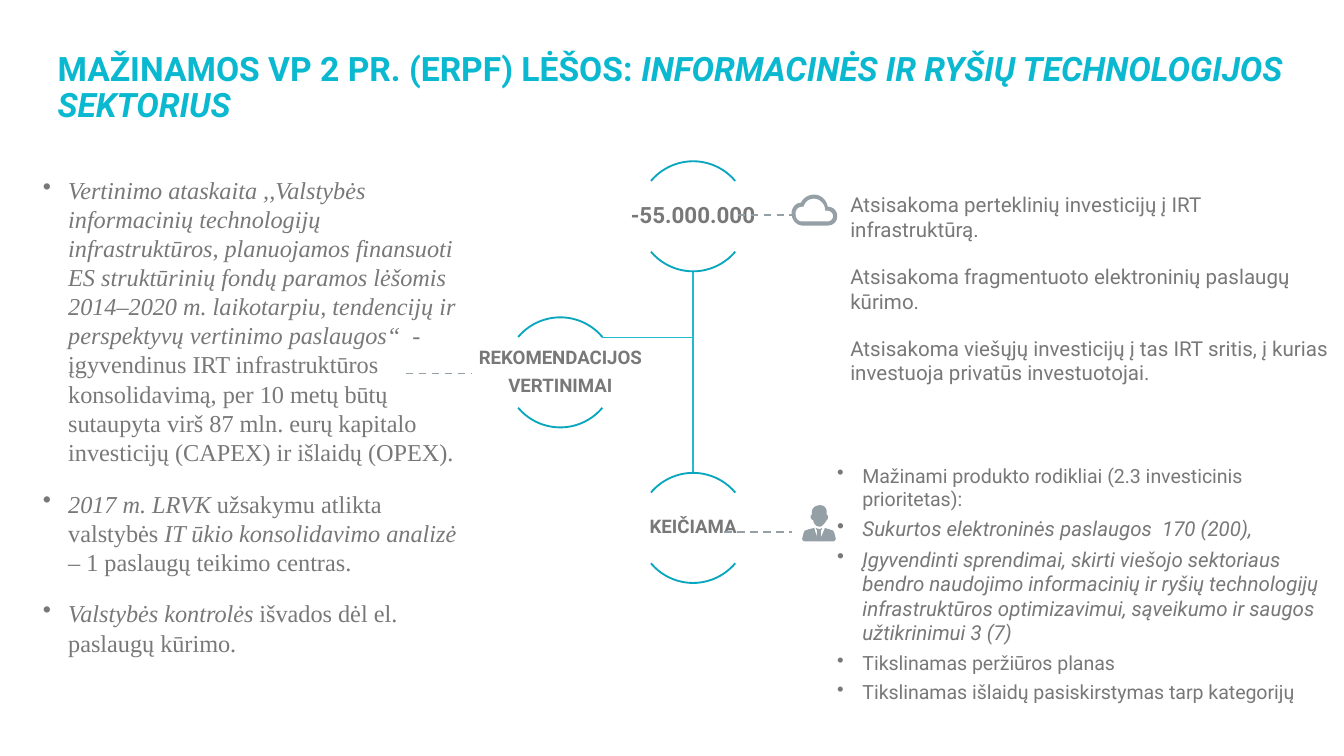
from dataclasses import dataclass

from lxml.etree import SubElement
from pptx import Presentation
from pptx.dml.color import RGBColor
from pptx.enum.dml import MSO_LINE
from pptx.enum.shapes import MSO_CONNECTOR, MSO_SHAPE
from pptx.enum.text import MSO_ANCHOR, MSO_AUTO_SIZE, PP_ALIGN
from pptx.oxml.ns import qn
from pptx.util import Cm, Pt

TITLE = RGBColor(0x0A, 0xB8, 0xD0)
ARC = RGBColor(0x09, 0xA7, 0xBD)
TRUNK = RGBColor(0x23, 0xB9, 0xD1)
TEXT = RGBColor(0x78, 0x78, 0x78)
GREY = RGBColor(0x95, 0x9F, 0xA6)

SANS, SERIF = "Roboto", "Times New Roman"
RING = 2.08       # diameter of a hub
UNIT = 0.0254     # grid step of the icons, in cm


@dataclass
class Bit:
    text: str
    slant: bool = False


@dataclass
class Para:
    bits: list[Bit]
    size: float


@dataclass
class Style:
    font: str = SANS
    color: RGBColor = TEXT
    bold: bool = False
    align: PP_ALIGN = PP_ALIGN.LEFT
    anchor: MSO_ANCHOR = MSO_ANCHOR.TOP
    before: float = 0
    after: float = 0
    lead: float = 1.0
    bullet: bool = False
    grow: bool = False
    tight: bool = False


@dataclass
class Hub:
    x: float
    y: float
    lines: list[str]
    size: float


@dataclass
class Icon:
    """Rings of 2-number corners and 6-number Bezier curves."""
    x: float
    y: float
    rings: list[list[tuple[int, ...]]]


def add_text(slide, box: tuple, paras: list[Para], style: Style) -> None:
    frame = slide.shapes.add_textbox(*map(Cm, box)).text_frame
    frame.word_wrap = True
    frame.vertical_anchor = style.anchor
    if style.grow:
        frame.auto_size = MSO_AUTO_SIZE.SHAPE_TO_FIT_TEXT
    if style.tight:
        frame.margin_left = frame.margin_right = Cm(0.03)
        frame.margin_top = frame.margin_bottom = Cm(0.03)
    for i, para in enumerate(paras):
        line = frame.add_paragraph() if i else frame.paragraphs[0]
        if style.bullet:
            props = line._p.get_or_add_pPr()
            props.set("marL", str(Cm(0.48)))
            props.set("indent", str(-Cm(0.48)))
            SubElement(props, qn("a:buChar"), char="•")
        line.alignment = style.align
        line.line_spacing = style.lead
        line.space_before = Pt(style.before if i else 0)
        line.space_after = Pt(style.after)
        for bit in para.bits:
            run = line.add_run()
            run.text = bit.text
            font = run.font
            font.name, font.size = style.font, Pt(para.size)
            font.bold, font.italic = style.bold, bit.slant
            font.color.rgb = style.color


def add_line(slide, x1: float, y1: float, x2: float, y2: float,
             color: RGBColor, dash: bool = False) -> None:
    line = slide.shapes.add_connector(
        MSO_CONNECTOR.STRAIGHT, Cm(x1), Cm(y1), Cm(x2), Cm(y2))
    line.line.color.rgb = color
    line.line.width = Pt(1)
    if dash:
        line.line.dash_style = MSO_LINE.DASH
    SubElement(line._element.spPr, qn("a:effectLst"))


def add_hub(slide, hub: Hub) -> None:
    for start, end in ((132, 192), (24, 84)):
        arc = slide.shapes.add_shape(
            MSO_SHAPE.ARC, Cm(hub.x - RING / 2), Cm(hub.y - RING / 2),
            Cm(RING), Cm(RING))
        arc.adjustments[0], arc.adjustments[1] = start, end
        arc.shadow.inherit = False
        arc.fill.background()
        arc.line.color.rgb = ARC
        arc.line.width = Pt(1)
    wide, high = 4.14, 1.32
    add_text(slide, (hub.x - wide / 2, hub.y - high / 2, wide, high),
             [Para([Bit(row)], hub.size) for row in hub.lines],
             Style(bold=True, align=PP_ALIGN.CENTER, anchor=MSO_ANCHOR.MIDDLE,
                   after=4, lead=0.9, tight=True))


def trace(ring: list[tuple[int, ...]]) -> list[tuple[float, float]]:
    """Turn corners and curves into a row of points."""
    dots = []
    for step in ring:
        if len(step) == 2:
            dots.append(step)
            continue
        ax, ay = dots[-1]
        bx, by, cx, cy, dx, dy = step
        for k in range(1, 9):
            t = k / 8
            u = 1 - t
            a, b, c, d = u**3, 3 * u * u * t, 3 * u * t * t, t**3
            dots.append((a * ax + b * bx + c * cx + d * dx,
                         a * ay + b * by + c * cy + d * dy))
    return dots


def add_icon(slide, icon: Icon) -> None:
    pen = None
    for ring in icon.rings:
        dots = [(Cm(icon.x + x * UNIT), Cm(icon.y + y * UNIT))
                for x, y in trace(ring)]
        if pen is None:
            pen = slide.shapes.build_freeform(*dots[0])
        else:
            pen.move_to(*dots[0])
        pen.add_line_segments(dots[1:], close=True)
    shape = pen.convert_to_shape()
    shape.shadow.inherit = False
    shape.fill.solid()
    shape.fill.fore_color.rgb = GREY
    shape.line.fill.background()


HUBS = [
    Hub(13.1, 4.09, ["-55.000.000"], 12),
    Hub(13.1, 9.98, ["KEIČIAMA"], 10),
    Hub(10.59, 7.04, ["REKOMENDACIJOS", "VERTINIMAI"], 10),
]
DASHES = [(7.67, 7.06, 8.92, 7.06), (13.94, 4.06, 14.96, 4.06),
          (13.69, 10.06, 14.96, 10.06)]
CLOUD = Icon(14.96, 3.68, [
    [(27, 9), (26, 4, 22, 0, 17, 0), (13, 0, 9, 2, 7, 6), (3, 6, 0, 10, 0, 14),
     (0, 19, 4, 23, 8, 23), (27, 23), (31, 23, 34, 20, 34, 16),
     (34, 12, 31, 9, 27, 9)],
    [(27, 20), (8, 20), (5, 20, 3, 18, 3, 14), (3, 11, 5, 9, 8, 9), (9, 9),
     (10, 5, 13, 3, 17, 3), (21, 3, 25, 7, 25, 11), (25, 12), (27, 12),
     (29, 12, 31, 14, 31, 16), (31, 18, 29, 20, 27, 20)]])
BODY = Icon(15.16, 9.98, [
    [(25, 8), (24, 4), (23, 2), (20, 1), (17, 0), (14, 7), (14, 2), (15, 0),
     (13, 1), (10, 0), (11, 2), (11, 7), (9, 0), (5, 1), (2, 2), (1, 4),
     (0, 8), (0, 9, 1, 10, 2, 10), (23, 10), (24, 10, 25, 9, 25, 8)]])
HEAD = Icon(15.32, 9.55, [
    [(12, 7), (12, 5), (12, 2, 10, 0, 7, 0), (4, 0, 1, 2, 1, 5), (1, 7),
     (0, 8), (0, 11, 2, 11, 2, 11), (2, 13, 3, 14, 4, 15),
     (5, 16, 7, 16, 7, 16), (7, 16, 8, 16, 9, 15), (10, 14, 11, 13, 12, 11),
     (12, 11, 13, 11, 13, 8)]])

HEADING = [Para([Bit("MAŽINAMOS VP 2 PR. (ERPF) LĖŠOS: "),
                 Bit("INFORMACINĖS IR RYŠIŲ TECHNOLOGIJOS SEKTORIUS", True)], 18)]
STUDY = [
    Para([Bit("Vertinimo ataskaita ,,Valstybės informacinių technologijų infrastruktūros, "
              "planuojamos finansuoti ES struktūrinių fondų paramos lėšomis 2014–2020 m. "
              "laikotarpiu, tendencijų ir perspektyvų vertinimo paslaugos“  - ", True),
          Bit("įgyvendinus IRT infrastruktūros konsolidavimą, per 10 metų būtų sutaupyta "
              "virš 87 mln. eurų kapitalo investicijų (CAPEX) ir išlaidų (OPEX).")], 13),
    Para([Bit("2017 m. LRVK ", True), Bit("užsakymu atlikta valstybės "),
          Bit("IT ūkio konsolidavimo analizė ", True),
          Bit("– 1 paslaugų teikimo centras.")], 13),
    Para([Bit("Valstybės kontrolės ", True),
          Bit("išvados dėl el. paslaugų kūrimo.")], 13),
]
CHANGES = [
    Para([Bit("Mažinami produkto rodikliai (2.3 investicinis prioritetas):")], 10.5),
    Para([Bit("Sukurtos elektroninės paslaugos  170 (200),", True)], 11),
    Para([Bit("Įgyvendinti sprendimai, skirti viešojo sektoriaus bendro naudojimo "
              "informacinių ir ryšių technologijų infrastruktūros optimizavimui, "
              "sąveikumo ir saugos užtikrinimui 3 (7)", True)], 11),
    Para([Bit("Tikslinamas peržiūros planas")], 10.5),
    Para([Bit("Tikslinamas išlaidų pasiskirstymas tarp kategorijų")], 10.5),
]
CUTS = [Para([Bit(text)], 11) for text in (
    "Atsisakoma perteklinių investicijų į IRT infrastruktūrą.",
    "Atsisakoma fragmentuoto elektroninių paslaugų kūrimo.",
    "Atsisakoma viešųjų investicijų į tas IRT sritis, į kurias investuoja "
    "privatūs investuotojai.")]


def main() -> None:
    deck = Presentation()
    deck.slide_width, deck.slide_height = Cm(25.4), Cm(14.29)
    slide = deck.slides.add_slide(deck.slide_layouts[6])

    # Tree of hubs
    add_line(slide, 13.1, 5.13, 13.1, 8.94, TRUNK)
    add_line(slide, 13.1, 6.38, 11.38, 6.38, TRUNK)
    for hub in HUBS:
        add_hub(slide, hub)

    # Dashed links and icons
    for ends in DASHES:
        add_line(slide, *ends, GREY, dash=True)
    for icon in (CLOUD, BODY, HEAD):
        add_icon(slide, icon)

    # Title and text blocks
    add_text(slide, (0.84, 0.51, 24.56, 2.34), HEADING,
             Style(color=TITLE, bold=True, anchor=MSO_ANCHOR.MIDDLE, after=6, lead=0.9))
    add_text(slide, (0.56, 3.18, 8.36, 10.44), STUDY,
             Style(font=SERIF, before=6, after=6, bullet=True, grow=True))
    add_text(slide, (15.57, 8.64, 9.83, 4.83), CHANGES,
             Style(before=3, bullet=True, grow=True))
    add_text(slide, (15.82, 3.51, 9.58, 3.45), CUTS,
             Style(before=6, after=6, grow=True))

    deck.save("out.pptx")


if __name__ == "__main__":
    main()
